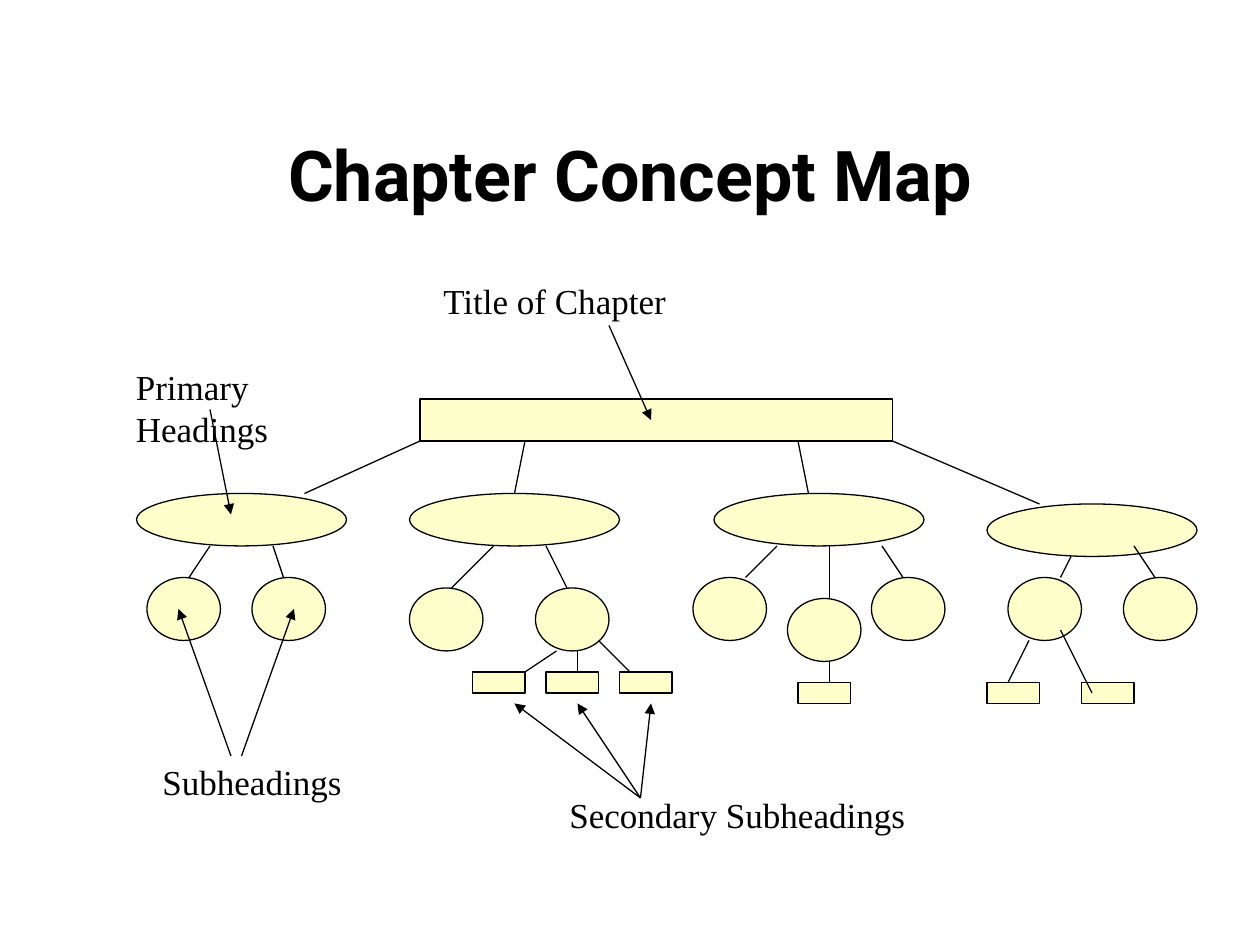
import pptx
import pptx.dml.color
import pptx.enum.shapes
import pptx.enum.text
import pptx.oxml.ns
import pptx.util
from dataclasses import dataclass
from lxml import etree
from pptx.util import Inches


@dataclass(frozen=True)
class Theme:
    ink = pptx.dml.color.RGBColor(0x00, 0x00, 0x00)
    node_fill = pptx.dml.color.RGBColor(0xFF, 0xFF, 0xCC)
    title_font = "Roboto"
    label_font = "Times New Roman"
    title_size = pptx.util.Pt(40)
    label_size = pptx.util.Pt(20)
    line_width = pptx.util.Pt(0.75)


theme = Theme()
CELL = Inches(1) // 12  # the map sits on a grid of twelfths of an inch
SHAPES = pptx.enum.shapes.MSO_SHAPE

presentation = pptx.Presentation()
presentation.slide_width = Inches(10)
presentation.slide_height = Inches(7.5)
slide = presentation.slides.add_slide(presentation.slide_layouts[5])


def add_node(kind, left, top, width, height):
    shape = slide.shapes.add_shape(
        kind, left * CELL, top * CELL, width * CELL, height * CELL)
    shape.shadow.inherit = False
    shape.fill.solid()
    shape.fill.fore_color.rgb = theme.node_fill
    shape.line.color.rgb = theme.ink
    shape.line.width = theme.line_width


def add_line(start, end, arrow=False):
    connector = slide.shapes.add_connector(
        pptx.enum.shapes.MSO_CONNECTOR.STRAIGHT,
        start[0] * CELL, start[1] * CELL, end[0] * CELL, end[1] * CELL)
    connector.line.color.rgb = theme.ink
    connector.line.width = theme.line_width
    if arrow:
        outline = connector.line._get_or_add_ln()
        etree.SubElement(outline, pptx.oxml.ns.qn("a:tailEnd"), type="triangle")
    etree.SubElement(connector._element.spPr, pptx.oxml.ns.qn("a:effectLst"))


# Slide title
title = slide.shapes.title
title.left, title.top = Inches(0), Inches(0.75)
title.width, title.height = Inches(10), Inches(1.25)
title.text_frame.text = "Chapter Concept Map"
title.text_frame.vertical_anchor = pptx.enum.text.MSO_ANCHOR.MIDDLE
paragraph = title.text_frame.paragraphs[0]
paragraph.alignment = pptx.enum.text.PP_ALIGN.CENTER
font = paragraph.runs[0].font
font.name, font.size, font.bold = theme.title_font, theme.title_size, True
font.color.rgb = theme.ink

# Chapter, primary headings, subheadings and secondary subheadings
levels = [
    (SHAPES.RECTANGLE, (45, 4), [(40, 38)]),
    (SHAPES.OVAL, (20, 5), [(13, 47), (39, 47), (68, 47), (94, 48)]),
    (SHAPES.OVAL, (7, 6), [(14, 55), (24, 55), (39, 56), (51, 56), (66, 55),
                           (75, 57), (83, 55), (96, 55), (107, 55)]),
    (SHAPES.RECTANGLE, (5, 2), [(45, 64), (52, 64), (59, 64),
                                (76, 65), (94, 65), (103, 65)]),
]
for kind, (width, height), positions in levels:
    for left, top in positions:
        add_node(kind, left, top, width, height)

# Branches, level by level
branches = [
    ((40, 42), (29, 47)), ((50, 42), (49, 47)),
    ((76, 42), (77, 47)), ((85, 42), (99, 48)),

    ((20, 52), (18, 55)), ((26, 52), (27, 55)),
    ((47, 52), (43, 56)), ((52, 52), (54, 56)),
    ((74, 52), (71, 55)), ((79, 52), (79, 57)), ((84, 52), (86, 55)),
    ((102, 53), (101, 55)), ((108, 52), (110, 55)),

    ((53, 62), (50, 64)), ((55, 62), (55, 64)), ((57, 61), (60, 64)),
    ((79, 63), (79, 65)),
    ((98, 61), (96, 65)), ((101, 60), (104, 66)),
]
for start, end in branches:
    add_line(start, end)

# Labels with the arrows that point from them into the map
labels = [
    ("Title of Chapter", 3.42, 2.17, 2.81, [((58, 31), (62, 40))]),
    ("Primary Headings", 0.98, 2.85, 2.1, [((20, 39), (22, 49))]),
    ("Subheadings", 1.19, 5.99, 2.89,
     [((22, 72), (17, 58)), ((23, 72), (28, 58))]),
    ("Secondary Subheadings", 4.42, 6.25, 2.89,
     [((61, 76), (49, 67)), ((61, 76), (55, 67)), ((61, 76), (62, 67))]),
]
for text, left, top, width, arrows in labels:
    label = slide.shapes.add_textbox(
        Inches(left), Inches(top), Inches(width), Inches(0.43))
    label.text_frame.word_wrap = True
    label.text_frame.text = text
    font = label.text_frame.paragraphs[0].runs[0].font
    font.name, font.size = theme.label_font, theme.label_size
    font.color.rgb = theme.ink
    for start, end in arrows:
        add_line(start, end, arrow=True)

presentation.save("out.pptx")
